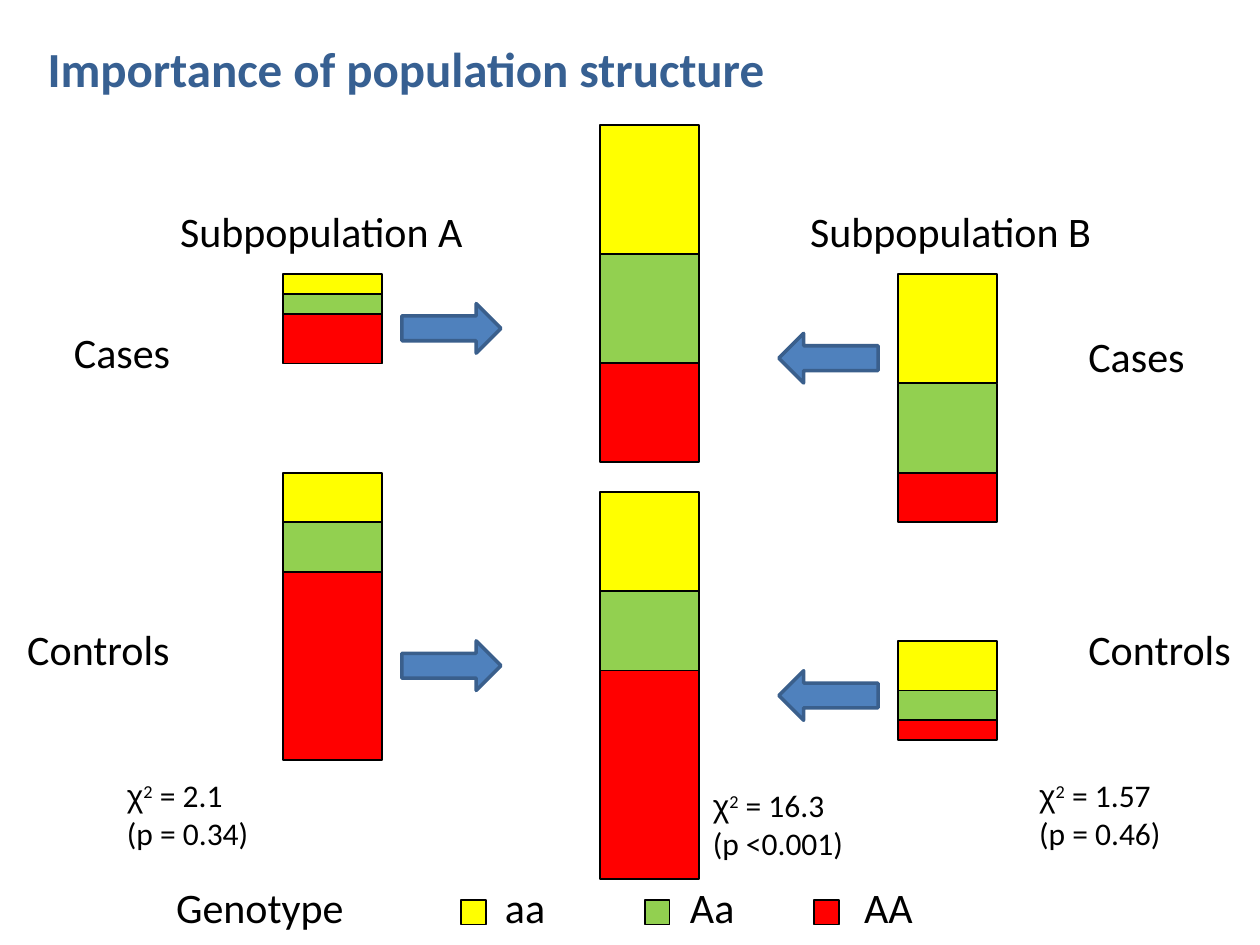
from lxml import etree
from pptx import Presentation
from pptx.dml.color import RGBColor
from pptx.enum.shapes import MSO_SHAPE
from pptx.enum.text import MSO_AUTO_SIZE
from pptx.oxml.ns import qn
from pptx.util import Cm, Pt

RECTANGLE = MSO_SHAPE.RECTANGLE
RIGHT_ARROW = MSO_SHAPE.RIGHT_ARROW
FIT_SHAPE = MSO_AUTO_SIZE.SHAPE_TO_FIT_TEXT

COLORS = {
    "title": "376092", "text": "000000", "outline": "000000",
    "aa": "FFFF00", "Aa": "92D050", "AA": "FF0000",
    "arrow": "4F81BD", "arrow outline": "3A5F8C",
}
GENOTYPES = ["aa", "Aa", "AA"]

# Content; all lengths are in centimetres
TITLE = ("Importance of population structure", 0.71, 0.66, 15.14, 1.45)
LABELS = [  # text, left, top, width
    ("Subpopulation A", 3.38, 4.01, 6.27),
    ("Subpopulation B", 16.08, 4.01, 6.25),
    ("Cases", 1.24, 6.45, 2.46),
    ("Controls", 0.3, 12.45, 3.4),
    ("Cases", 21.69, 6.53, 2.46),
    ("Controls", 21.69, 12.45, 3.4),
]
BARS = [  # left, top, segment heights in genotype order
    (5.71, 5.53, (0.4, 0.4, 1)),
    (5.71, 9.53, (1, 1, 3.8)),
    (18.1, 5.53, (2.2, 1.8, 1)),
    (18.1, 12.92, (1, 0.6, 0.4)),
    (12.09, 2.52, (2.6, 2.2, 2)),
    (12.09, 9.92, (2, 1.6, 4.2)),
]
ARROWS = [  # left, top, rotation
    (8.1, 6.12, 0), (15.7, 6.72, 180),
    (8.1, 12.92, 0), (15.7, 13.52, 180),
]
STATISTICS = [  # chi-squared, p value, left, top, width
    ("2.1", "= 0.34", 2.31, 15.52, 3),
    ("16.3", "<0.001", 14.12, 15.72, 3.18),
    ("1.57", "= 0.46", 20.7, 15.52, 3),
]
LEGEND_BOX = (3.3, 17.65, 15.85, 1.27)
LEGEND_TABS = [6.63, 10.36, 13.87]
LEGEND_KEYS = [9.3, 13, 16.41]
KEY_TOP, KEY_SIZE = 18.14, 0.5
BAR_WIDTH = 2
ARROW_WIDTH, ARROW_HEIGHT = 2, 1
LABEL_HEIGHT, STATISTIC_HEIGHT = 1.27, 1.8

presentation = Presentation()
presentation.slide_width, presentation.slide_height = Cm(25.4), Cm(19.05)
slide = presentation.slides.add_slide(presentation.slide_layouts[6])


def add_text(lines, left, top, width, height, size, color="text", bold=False, wrap=False):
    box = slide.shapes.add_textbox(Cm(left), Cm(top), Cm(width), Cm(height))
    frame = box.text_frame
    frame.word_wrap = wrap
    frame.auto_size = FIT_SHAPE
    frame.text = "\n".join(lines)
    for paragraph in frame.paragraphs:
        font = paragraph.font
        font.name, font.size, font.bold = "Calibri", Pt(size), bold
        font.color.rgb = RGBColor.from_string(COLORS[color])
    return frame.paragraphs


def add_block(kind, left, top, width, height, fill, outline="outline", line_width=1):
    shape = slide.shapes.add_shape(kind, Cm(left), Cm(top), Cm(width), Cm(height))
    shape.shadow.inherit = False
    shape.fill.solid()
    shape.fill.fore_color.rgb = RGBColor.from_string(COLORS[fill])
    shape.line.color.rgb = RGBColor.from_string(COLORS[outline])
    shape.line.width = Pt(line_width)
    return shape


# Title and labels
add_text([TITLE[0]], *TITLE[1:], size=28, color="title", bold=True)
for text, left, top, width in LABELS:
    add_text([text], left, top, width, LABEL_HEIGHT, 24)

# Stacked genotype bars
for left, top, heights in BARS:
    for genotype, height in zip(GENOTYPES, heights):
        add_block(RECTANGLE, left, top, BAR_WIDTH, height, genotype)
        top += height

# Arrows towards the pooled bars
for left, top, rotation in ARROWS:
    arrow = add_block(RIGHT_ARROW, left, top, ARROW_WIDTH, ARROW_HEIGHT,
                      "arrow", "arrow outline", 2)
    arrow.rotation = rotation

# Test statistics
for chi_squared, p_value, left, top, width in STATISTICS:
    first, _ = add_text(["χ", f"(p {p_value})"], left, top, width, STATISTIC_HEIGHT, 18)
    first.runs[0].font.name = "Arial"
    exponent = first.add_run()
    exponent.text = "2"
    exponent._r.get_or_add_rPr().set("baseline", "30000")
    first.add_run().text = f" = {chi_squared}"

# Legend with tab stops and colour keys
legend = add_text(["\t".join(["Genotype"] + GENOTYPES)], *LEGEND_BOX, size=24, wrap=True)[0]
tab_list = etree.Element(qn("a:tabLst"))
for position in LEGEND_TABS:
    etree.SubElement(tab_list, qn("a:tab"), pos=str(Cm(position)), algn="l")
legend._p.get_or_add_pPr().insert(0, tab_list)
for genotype, left in zip(GENOTYPES, LEGEND_KEYS):
    add_block(RECTANGLE, left, KEY_TOP, KEY_SIZE, KEY_SIZE, genotype)

presentation.save("out.pptx")
